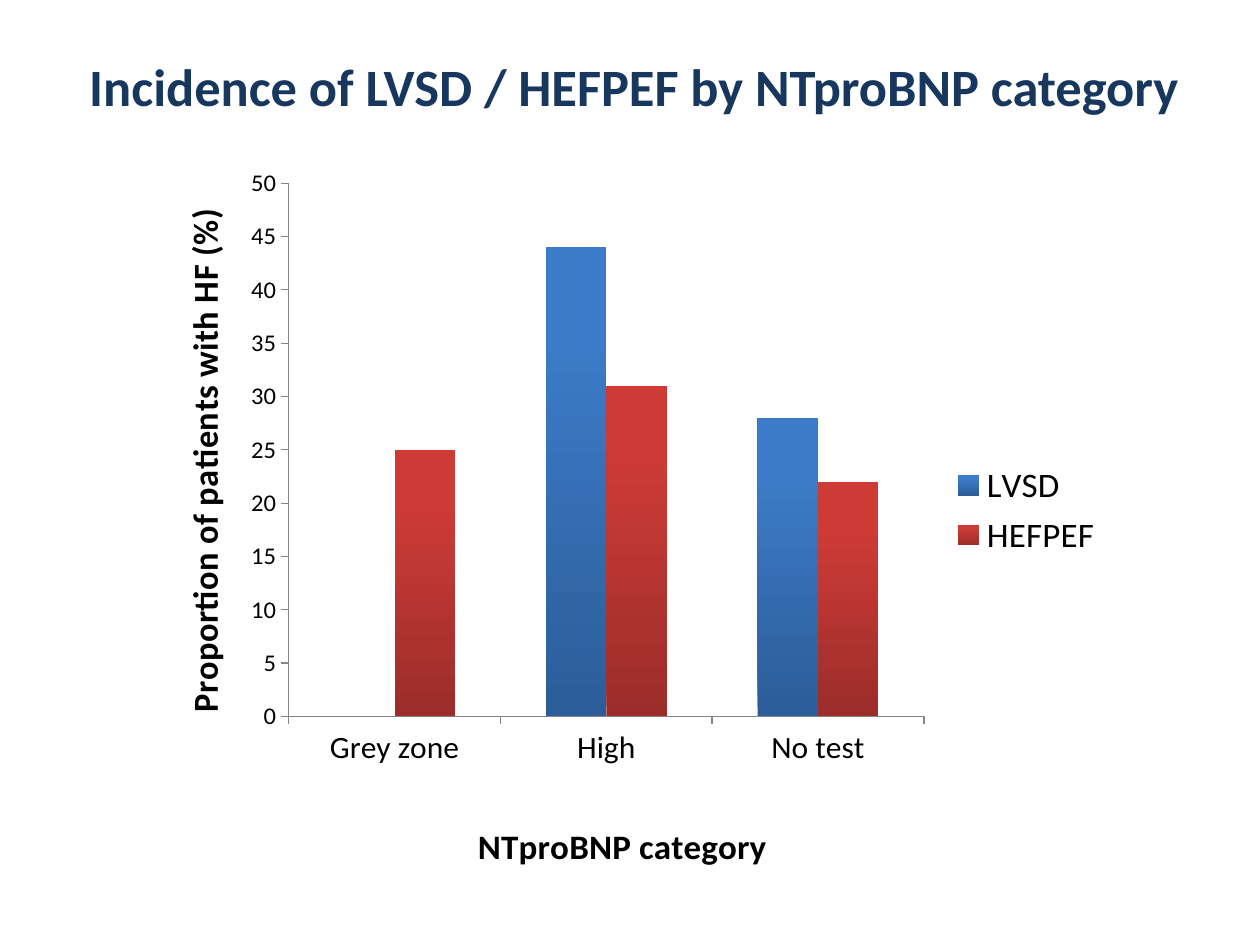
from lxml.etree import SubElement
from pptx import Presentation
from pptx.chart.data import CategoryChartData
from pptx.dml.color import RGBColor
from pptx.enum.chart import XL_CHART_TYPE, XL_LEGEND_POSITION, XL_TICK_MARK
from pptx.enum.text import MSO_ANCHOR, PP_ALIGN
from pptx.oxml.ns import qn
from pptx.util import Pt

COLORS = {"title": "17375E", "text": "000000", "axis": "868686"}
FONT = "Calibri"
CATEGORIES = ["Grey zone", "High", "No test"]
SERIES = {
    "LVSD": {"values": (0, 44, 28), "gradient": ("2C5D98", "3C7BC7")},
    "HEFPEF": {"values": (25, 31, 22), "gradient": ("9B2D2A", "CE3B37")},
}


def format_font(font, color="text", **values):
    """Apply a colour and a set of format values to a font."""
    for name, value in {"name": FONT, **values}.items():
        setattr(font, name, value)
    font.color.rgb = RGBColor.from_string(COLORS[color])


def set_layout(element, index, **values):
    """Give a chart element a manual layout in fractions of the chart."""
    for old_layout in element.findall(qn("c:layout")):
        element.remove(old_layout)
    layout = SubElement(element, qn("c:layout"))
    element.insert(index, layout)
    manual = SubElement(layout, qn("c:manualLayout"))
    for name, value in values.items():
        SubElement(manual, qn(f"c:{name}")).set("val", str(value))


def place_title(slide, text, box):
    """Place the slide title in its box."""
    title = slide.shapes.title
    for name, value in zip(("left", "top", "width", "height"), box):
        setattr(title, name, Pt(value))
    frame = title.text_frame
    frame.text = text
    frame.word_wrap = True
    frame.vertical_anchor = MSO_ANCHOR.MIDDLE
    paragraph = frame.paragraphs[0]
    paragraph.alignment = PP_ALIGN.CENTER
    format_font(paragraph.runs[0].font, "title", size=Pt(30), bold=True)


def format_axis(axis, title, size, x, y):
    """Format an axis and place its title."""
    values = {
        "has_major_gridlines": False,
        "major_tick_mark": XL_TICK_MARK.OUTSIDE,
        "minor_tick_mark": XL_TICK_MARK.NONE,
    }
    for name, value in values.items():
        setattr(axis, name, value)
    format_font(axis.tick_labels.font, size=Pt(size))
    axis.format.line.color.rgb = RGBColor.from_string(COLORS["axis"])
    axis.format.line.width = Pt(0.75)
    frame = axis.axis_title.text_frame
    frame.text = title
    format_font(frame.paragraphs[0].runs[0].font, size=Pt(20), bold=True)
    set_layout(axis.axis_title._element, 1, xMode="edge", yMode="edge", x=x, y=y)


def format_series(series, gradient):
    """Fill the columns of a series from bottom to top."""
    fill = series.format.fill
    fill.gradient()
    fill.gradient_angle = 90
    for stop, color, position in zip(fill.gradient_stops, gradient, (0, 0.8)):
        stop.color.rgb = RGBColor.from_string(color)
        stop.position = position


def place_chart(slide, box):
    """Place the clustered column chart in its box."""
    data = CategoryChartData()
    data.categories = CATEGORIES
    for name, details in SERIES.items():
        data.add_series(name, details["values"])
    chart = slide.shapes.add_chart(
        XL_CHART_TYPE.COLUMN_CLUSTERED, *map(Pt, box), data
    ).chart
    chart.has_title = False
    format_font(chart.font, size=Pt(10))

    plot = chart.plots[0]
    for name, value in {"gap_width": 150, "overlap": 0, "vary_by_categories": False}.items():
        setattr(plot, name, value)
    for series in plot.series:
        format_series(series, SERIES[series.name]["gradient"])

    format_axis(chart.category_axis, "NTproBNP category", 18, 0.33, 0.93)
    format_axis(chart.value_axis, "Proportion of patients with HF (%)", 14, 0.02, 0.08)
    for name, value in {"minimum_scale": 0, "maximum_scale": 50, "major_unit": 5}.items():
        setattr(chart.value_axis, name, value)

    chart.has_legend = True
    chart.legend.position = XL_LEGEND_POSITION.RIGHT
    chart.legend.include_in_layout = False
    format_font(chart.legend.font, size=Pt(20))
    set_layout(
        chart._chartSpace.chart.plotArea, 0, layoutTarget="inner",
        xMode="edge", yMode="edge", x=0.14, y=0.04, w=0.66, h=0.75,
    )


def main():
    """Build and save the presentation."""
    presentation = Presentation()
    presentation.slide_width, presentation.slide_height = Pt(720), Pt(540)
    slide = presentation.slides.add_slide(presentation.slide_layouts[5])
    place_title(slide, "Incidence of LVSD / HEFPEF by NTproBNP category", (25, 9.5, 675, 79))
    place_chart(slide, (88, 88.5, 550, 414))
    presentation.save("out.pptx")


if __name__ == "__main__":
    main()
